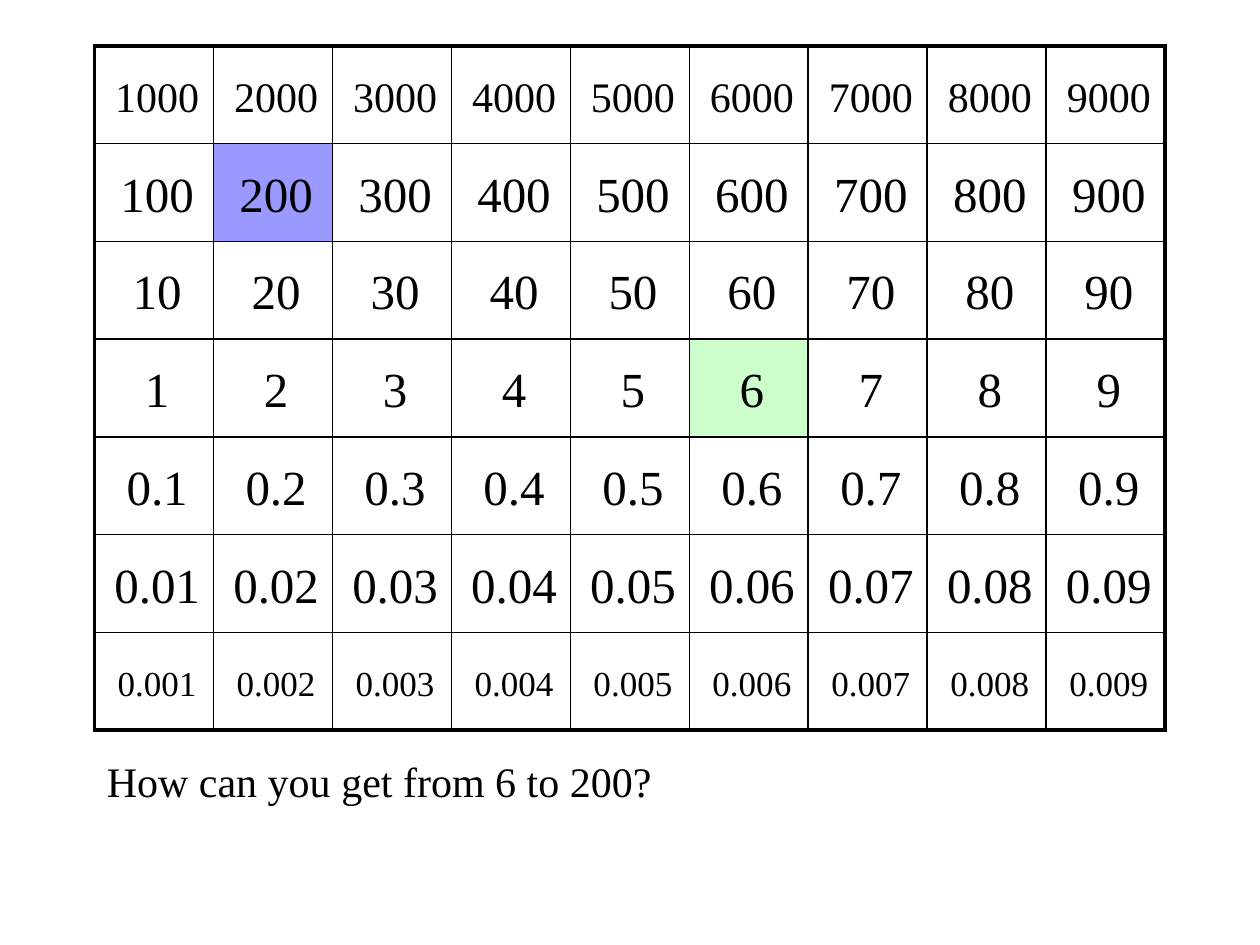
from lxml import etree
from pptx import Presentation
from pptx.dml.color import RGBColor
from pptx.enum.text import MSO_ANCHOR, PP_ALIGN
from pptx.oxml.ns import qn
from pptx.util import Pt

MIDDLE = MSO_ANCHOR.MIDDLE
CENTER = PP_ALIGN.CENTER
BLACK = RGBColor(0x00, 0x00, 0x00)
BLUE = RGBColor(0x99, 0x99, 0xFF)
GREEN = RGBColor(0xCC, 0xFF, 0xCC)
FONT = "Times New Roman"
THIN, THICK = Pt(1), Pt(2.25)

# Each row: text before the digit, text after it, font size
PLACE_VALUES = [
    ("", "000", 24),
    ("", "00", 28),
    ("", "0", 28),
    ("", "", 28),
    ("0.", "", 28),
    ("0.0", "", 28),
    ("0.00", "", 20),
]
DIGITS = range(1, 10)
HIGHLIGHTS = {"200": BLUE, "6": GREEN}


def style_text(paragraph, size):
    paragraph.font.name = FONT
    paragraph.font.size = Pt(size)
    paragraph.font.color.rgb = BLACK


def add_border(cell, side, width):
    properties = cell._tc.get_or_add_tcPr()
    line = etree.SubElement(properties, qn(f"a:ln{side}"), w=str(width))
    fill = etree.SubElement(line, qn("a:solidFill"))
    etree.SubElement(fill, qn("a:srgbClr"), val=str(BLACK))


prs = Presentation()
prs.slide_width, prs.slide_height = Pt(720), Pt(540)
slide = prs.slides.add_slide(prs.slide_layouts[6])

# Place value chart
row_count, column_count = len(PLACE_VALUES), len(DIGITS)
chart = slide.shapes.add_table(
    row_count, column_count, Pt(54), Pt(26.25), Pt(612), Pt(391)).table
chart.first_row = False
chart.horz_banding = False

for row, (prefix, suffix, size) in enumerate(PLACE_VALUES):
    for column, digit in enumerate(DIGITS):
        cell = chart.cell(row, column)
        cell.text = f"{prefix}{digit}{suffix}"
        cell.vertical_anchor = MIDDLE
        cell.margin_left = cell.margin_top = Pt(7.2)
        cell.margin_right = cell.margin_bottom = Pt(3.6)
        number = cell.text_frame.paragraphs[0]
        number.alignment = CENTER
        style_text(number, size)

        # Thick frame outside, thin grid inside
        outer_sides = {
            "L": column == 0,
            "R": column == column_count - 1,
            "T": row == 0,
            "B": row == row_count - 1,
        }
        for side, is_outer in outer_sides.items():
            add_border(cell, side, THICK if is_outer else THIN)

        # Start and target numbers
        if cell.text in HIGHLIGHTS:
            cell.fill.solid()
            cell.fill.fore_color.rgb = HIGHLIGHTS[cell.text]
        else:
            cell.fill.background()

# Question
question = slide.shapes.add_textbox(Pt(54), Pt(428.25), Pt(612), Pt(36)).text_frame
question.word_wrap = True
question.text = "How can you get from 6 to 200?"
style_text(question.paragraphs[0], 24)

prs.save("out.pptx")
